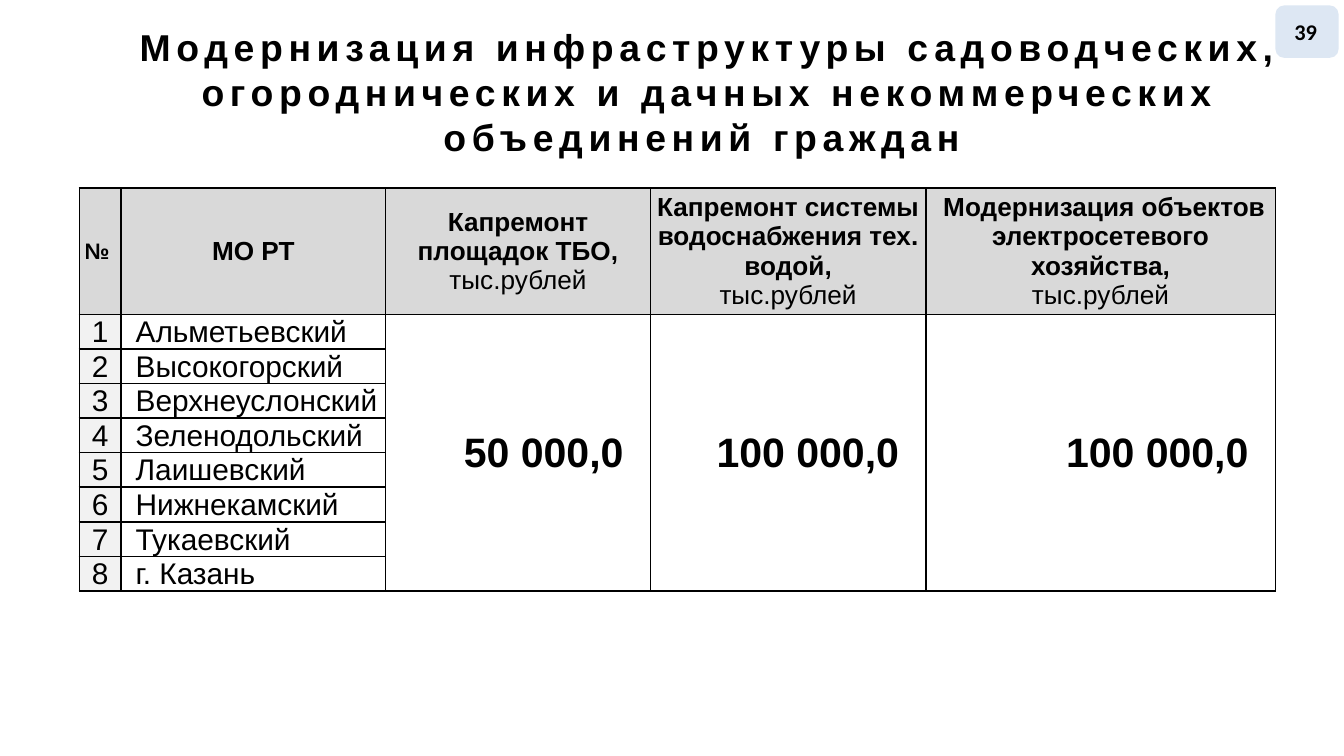
from dataclasses import dataclass

import pptx
import pptx.dml.color
import pptx.enum.shapes
import pptx.enum.text
import pptx.oxml
import pptx.oxml.ns
import pptx.util

Inches = pptx.util.Inches
Pt = pptx.util.Pt
ALIGN = pptx.enum.text.PP_ALIGN
ANCHOR = pptx.enum.text.MSO_ANCHOR

SLIDE_WIDTH = 10
SLIDE_HEIGHT = SLIDE_WIDTH * 9 / 16
BLACK, WHITE = "000000", "FFFFFF"
HEADER_FILL, NUMBER_FILL, BADGE_FILL = "D9D9D9", "F2F2F2", "DDE7F3"
UNIT = "тыс.рублей"


@dataclass
class Line:
    text: str
    size: float
    bold: bool = False
    font: str = "Arial"


@dataclass
class CellStyle:
    fill: str
    align: int
    anchor: int
    insets: tuple[float, float, float, float]
    indent: float = 0


@dataclass
class Column:
    width: float
    header: list[Line]
    total: str = ""


HEADER = CellStyle(HEADER_FILL, ALIGN.CENTER, ANCHOR.MIDDLE, (0, 0, 0, 0))
NUMBER = CellStyle(NUMBER_FILL, ALIGN.CENTER, ANCHOR.MIDDLE, (0.01, 0.01, 0.01, 0))
DISTRICT = CellStyle(WHITE, ALIGN.LEFT, ANCHOR.BOTTOM, (0.01, 0.01, 0.01, 0), 0.1)
TOTAL = CellStyle(WHITE, ALIGN.RIGHT, ANCHOR.MIDDLE, (0.01, 0.01, 0.2, 0))

COLUMNS = [
    Column(0.31, [Line("№ ", 12, True)]),
    Column(1.97, [Line("МО РТ", 14, True)]),
    Column(1.97, [Line("Капремонт площадок ТБО,", 14, True), Line(UNIT, 14)], "50 000,0"),
    Column(2.05, [Line("Капремонт системы водоснабжения тех. водой,", 14, True),
                  Line(UNIT, 14)], "100 000,0"),
    Column(2.6, [Line(" Модернизация объектов электросетевого хозяйства,", 14, True),
                 Line(UNIT, 14)], "100 000,0"),
]
DISTRICTS = ["Альметьевский", "Высокогорский", "Верхнеуслонский", "Зеленодольский",
             "Лаишевский", "Нижнекамский", "Тукаевский", "г. Казань"]


def set_fill(target, color: str) -> None:
    target.fill.solid()
    target.fill.fore_color.rgb = pptx.dml.color.RGBColor.from_string(color)


def set_values(target, values: dict) -> None:
    for name, value in values.items():
        setattr(target, name, value)


def write_lines(frame, lines: list[Line], align: int, indent: float = 0) -> None:
    for index, line in enumerate(lines):
        paragraph = frame.add_paragraph() if index else frame.paragraphs[0]
        paragraph.alignment = align
        if indent:
            paragraph._p.get_or_add_pPr().set("indent", str(Inches(indent)))
        run = paragraph.add_run()
        run.text = line.text
        set_values(run.font, {"name": line.font, "size": Pt(line.size), "bold": line.bold})
        run.font.color.rgb = pptx.dml.color.RGBColor.from_string(BLACK)


def add_borders(cell) -> None:
    properties = cell._tc.get_or_add_tcPr()
    for index, side in enumerate(("lnL", "lnR", "lnT", "lnB")):
        border = pptx.oxml.parse_xml(
            f'<a:{side} {pptx.oxml.ns.nsdecls("a")} w="{Pt(1)}"><a:solidFill>'
            f'<a:srgbClr val="{BLACK}"/></a:solidFill></a:{side}>')
        properties.insert(index, border)


def format_cell(cell, style: CellStyle, lines: list[Line]) -> None:
    left, top, right, bottom = (Inches(inset) for inset in style.insets)
    set_values(cell, {"margin_left": left, "margin_top": top, "margin_right": right,
                      "margin_bottom": bottom, "vertical_anchor": style.anchor})
    set_fill(cell, style.fill)
    add_borders(cell)
    write_lines(cell.text_frame, lines, style.align, style.indent)


def add_title(slide) -> None:
    title = slide.shapes.title
    set_values(title, {"left": Inches(0.91), "top": Inches(0.13),
                       "width": Inches(8.74), "height": Inches(0.53)})
    set_values(title.text_frame, {"word_wrap": True, "vertical_anchor": ANCHOR.TOP,
                                  "auto_size": pptx.enum.text.MSO_AUTO_SIZE.NONE})
    text = ("Модернизация инфраструктуры садоводческих, огороднических "
            "и дачных некоммерческих объединений граждан ")
    write_lines(title.text_frame, [Line(text, 20, True)], ALIGN.CENTER)
    # Letter spacing of 3 pt
    run = title.text_frame.paragraphs[0].runs[0]
    run._r.get_or_add_rPr().set("spc", "300")


def add_funding_table(slide) -> None:
    row_count = len(DISTRICTS) + 1
    table = slide.shapes.add_table(row_count, len(COLUMNS), Inches(0.59), Inches(1.4),
                                   Inches(8.9), Inches(2.86)).table
    set_values(table, {"first_row": False, "horz_banding": False})
    for index, row in enumerate(table.rows):
        row.height = Inches(0.24 if index else 0.94)

    # Headers, and one total over all districts
    for index, column in enumerate(COLUMNS):
        table.columns[index].width = Inches(column.width)
        format_cell(table.cell(0, index), HEADER, column.header)
        if column.total:
            table.cell(1, index).merge(table.cell(row_count - 1, index))
            format_cell(table.cell(1, index), TOTAL, [Line(column.total, 22, True)])
            for row in range(2, row_count):
                add_borders(table.cell(row, index))

    # Numbered districts
    for number, district in enumerate(DISTRICTS, start=1):
        format_cell(table.cell(number, 0), NUMBER, [Line(str(number), 16)])
        format_cell(table.cell(number, 1), DISTRICT, [Line(district, 16)])


def add_page_badge(slide) -> None:
    badge = slide.shapes.add_shape(pptx.enum.shapes.MSO_SHAPE.ROUNDED_RECTANGLE,
                                   Inches(9.49), Inches(0.04), Inches(0.47), Inches(0.39))
    badge.shadow.inherit = False
    set_fill(badge, BADGE_FILL)
    badge.line.fill.background()
    set_values(badge.text_frame, {
        "margin_left": Inches(0.08), "margin_right": Inches(0.1),
        "margin_top": Inches(0.05), "margin_bottom": Inches(0.05),
        "vertical_anchor": ANCHOR.MIDDLE, "word_wrap": True})
    write_lines(badge.text_frame, [Line("39", 12, True, "Calibri")], ALIGN.CENTER)


def main() -> None:
    presentation = pptx.Presentation()
    set_values(presentation, {"slide_width": Inches(SLIDE_WIDTH),
                              "slide_height": Inches(SLIDE_HEIGHT)})
    slide = presentation.slides.add_slide(presentation.slide_layouts[5])
    add_funding_table(slide)
    add_title(slide)
    add_page_badge(slide)
    presentation.save("out.pptx")


if __name__ == "__main__":
    main()
